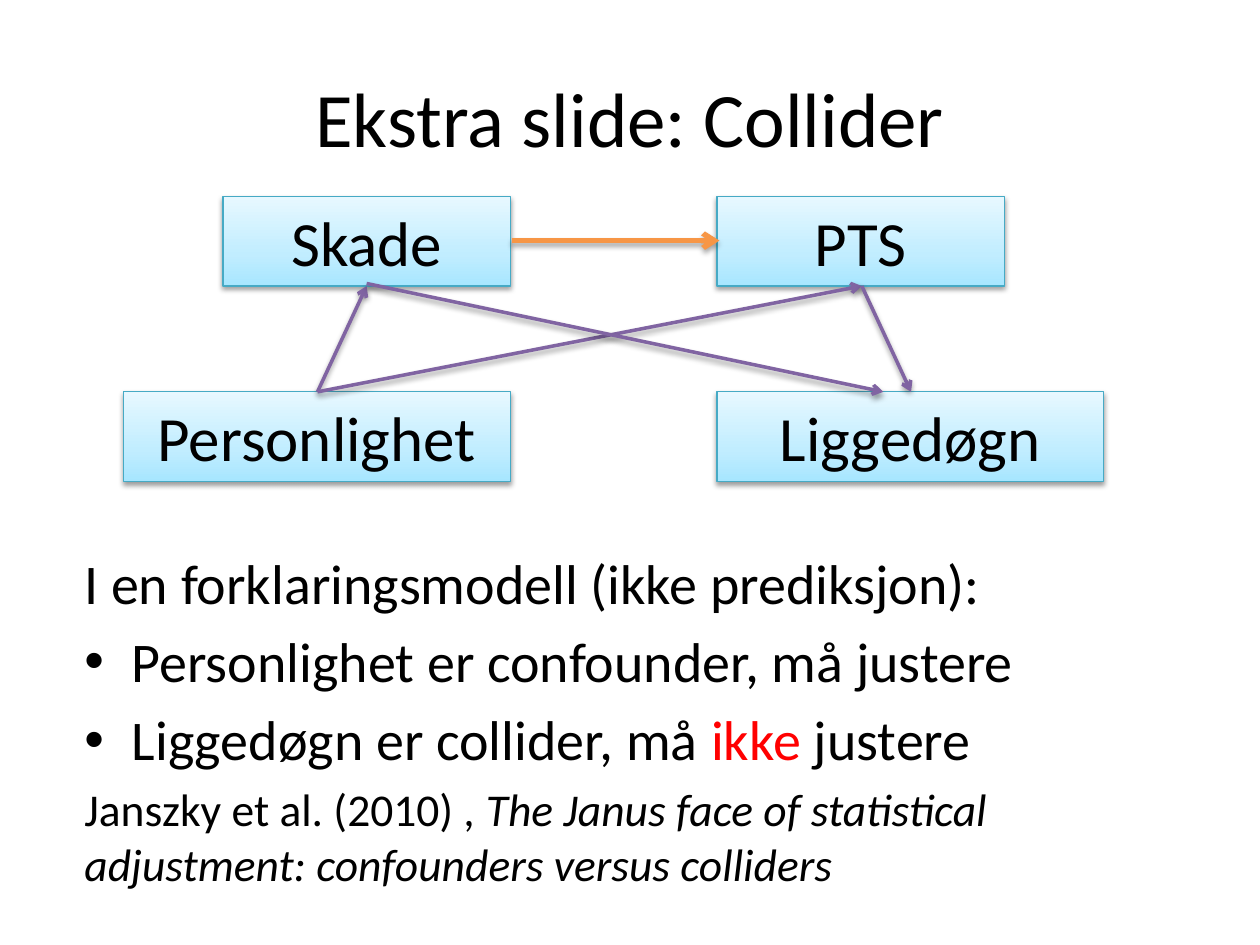
from copy import deepcopy

from lxml import etree
from pptx import Presentation
from pptx.dml.color import RGBColor
from pptx.enum.shapes import MSO_CONNECTOR, MSO_SHAPE
from pptx.enum.text import MSO_ANCHOR, PP_ALIGN
from pptx.oxml.ns import qn
from pptx.util import Inches, Pt

STRAIGHT = MSO_CONNECTOR.STRAIGHT
RECTANGLE = MSO_SHAPE.RECTANGLE
MIDDLE = MSO_ANCHOR.MIDDLE
CENTER = PP_ALIGN.CENTER

THEME = {
    "font": "Calibri",
    "text": RGBColor.from_string("000000"),
    "warning": RGBColor.from_string("FF0000"),
    "box_line": RGBColor.from_string("46AAC5"),
    "box_stops": [(0, "A7E6FF"), (0.35, "C1EDFF"), (1, "E7F8FF")],
    "effect": RGBColor.from_string("F79646"),
    "path": RGBColor.from_string("8064A2"),
    "title_size": Pt(44),
    "box_size": Pt(36),
    "body_size": Pt(32),
    "reference_size": Pt(26),
}


def add_run(paragraph, text, **formats):
    run = paragraph.add_run()
    run.text = text
    values = {"name": THEME["font"], **formats}
    run.font.color.rgb = values.pop("color", THEME["text"])
    for attribute, value in values.items():
        setattr(run.font, attribute, value)


def add_shadow(properties, opacity, distance):
    effects = properties.find(qn("a:effectLst"))
    if effects is None:
        effects = etree.SubElement(properties, qn("a:effectLst"))
    shadow = etree.SubElement(effects, qn("a:outerShdw"), blurRad=str(Pt(3.1)),
                              dist=str(Pt(distance)), dir="5400000", rotWithShape="0")
    color = etree.SubElement(shadow, qn("a:srgbClr"), val="000000")
    etree.SubElement(color, qn("a:alpha"), val=str(opacity * 1000))


presentation = Presentation()
presentation.slide_width, presentation.slide_height = Inches(10), Inches(7.5)
slide = presentation.slides.add_slide(presentation.slide_layouts[1])

# Title and body positions
heading, explanation = slide.placeholders
for placeholder, frame in [(heading, (0.5, 0.3, 9, 1.25)),
                           (explanation, (0.57, 4.3, 9, 4.57))]:
    for attribute, value in zip(("left", "top", "width", "height"), frame):
        setattr(placeholder, attribute, Inches(value))

# Title
heading.text_frame.vertical_anchor = MIDDLE
heading_line = heading.text_frame.paragraphs[0]
heading_line.alignment = CENTER
add_run(heading_line, "Ekstra slide: Collider", size=THEME["title_size"])

# Explanation: (bulleted, runs) for each paragraph
body = {"size": THEME["body_size"]}
reference = {"size": THEME["reference_size"]}
statements = [
    (False, [("I en forklaringsmodell (ikke prediksjon):", body)]),
    (True, [("Personlighet er confounder, må justere", body)]),
    (True, [("Liggedøgn er collider, må ", body),
            ("ikke ", {**body, "color": THEME["warning"]}),
            ("justere", body)]),
    (False, [("Janszky et al. (2010) , ", reference),
             ("The Janus face of statistical adjustment: confounders versus colliders",
              {**reference, "italic": True})]),
]
for index, (bulleted, runs) in enumerate(statements):
    frame = explanation.text_frame
    statement = frame.add_paragraph() if index else frame.paragraphs[0]
    if not bulleted:
        settings = statement._p.get_or_add_pPr()
        settings.set("marL", "0")
        settings.set("indent", "0")
        etree.SubElement(settings, qn("a:buNone"))
    for text, formats in runs:
        add_run(statement, text, **formats)

# Variable boxes: two rows around a shared gap
diagram = slide.shapes.add_group_shape().shapes
UPPER, LOWER, BOX_HEIGHT = 1.56, 3.11, 0.71
variables = [
    ("Skade", 1.77, UPPER, 2.28),
    ("PTS", 5.69, UPPER, 2.28),
    ("Personlighet", 0.98, LOWER, 3.07),
    ("Liggedøgn", 5.69, LOWER, 3.07),
]
for label, left, top, width in variables:
    box = diagram.add_shape(RECTANGLE, Inches(left), Inches(top),
                            Inches(width), Inches(BOX_HEIGHT))
    box.fill.gradient()
    box.fill.gradient_angle = 90
    first_stop = box._element.spPr.find(".//" + qn("a:gs"))
    first_stop.addnext(deepcopy(first_stop))
    for stop, (position, color) in zip(box.fill.gradient_stops, THEME["box_stops"]):
        stop.position = position
        stop.color.rgb = RGBColor.from_string(color)
    box.line.color.rgb = THEME["box_line"]
    box.line.width = Pt(0.75)
    box.shadow.inherit = False
    add_shadow(box._element.spPr, 38, 1.6)
    caption = box.text_frame.paragraphs[0]
    caption.alignment = CENTER
    add_run(caption, label, size=THEME["box_size"])

# Causal arrows: start, end, colour, width, shadow opacity and distance
UPPER_EDGE = UPPER + BOX_HEIGHT
path_format = (THEME["path"], 2, 38, 1.6)
arrows = [
    ((4.06, 1.91), (5.71, 1.91), (THEME["effect"], 3, 35, 1.8)),
    ((2.52, LOWER), (2.91, UPPER_EDGE), path_format),
    ((2.52, LOWER), (6.84, UPPER_EDGE), path_format),
    ((2.91, 2.25), (7.01, LOWER), path_format),
    ((6.84, UPPER_EDGE), (7.23, LOWER), path_format),
]
for start, end, (color, width, opacity, distance) in arrows:
    arrow = diagram.add_connector(STRAIGHT, *map(Inches, start + end))
    arrow.line.color.rgb = color
    arrow.line.width = Pt(width)
    etree.SubElement(arrow.line._get_or_add_ln(), qn("a:tailEnd"), type="arrow")
    add_shadow(arrow._element.spPr, opacity, distance)

presentation.save("out.pptx")
